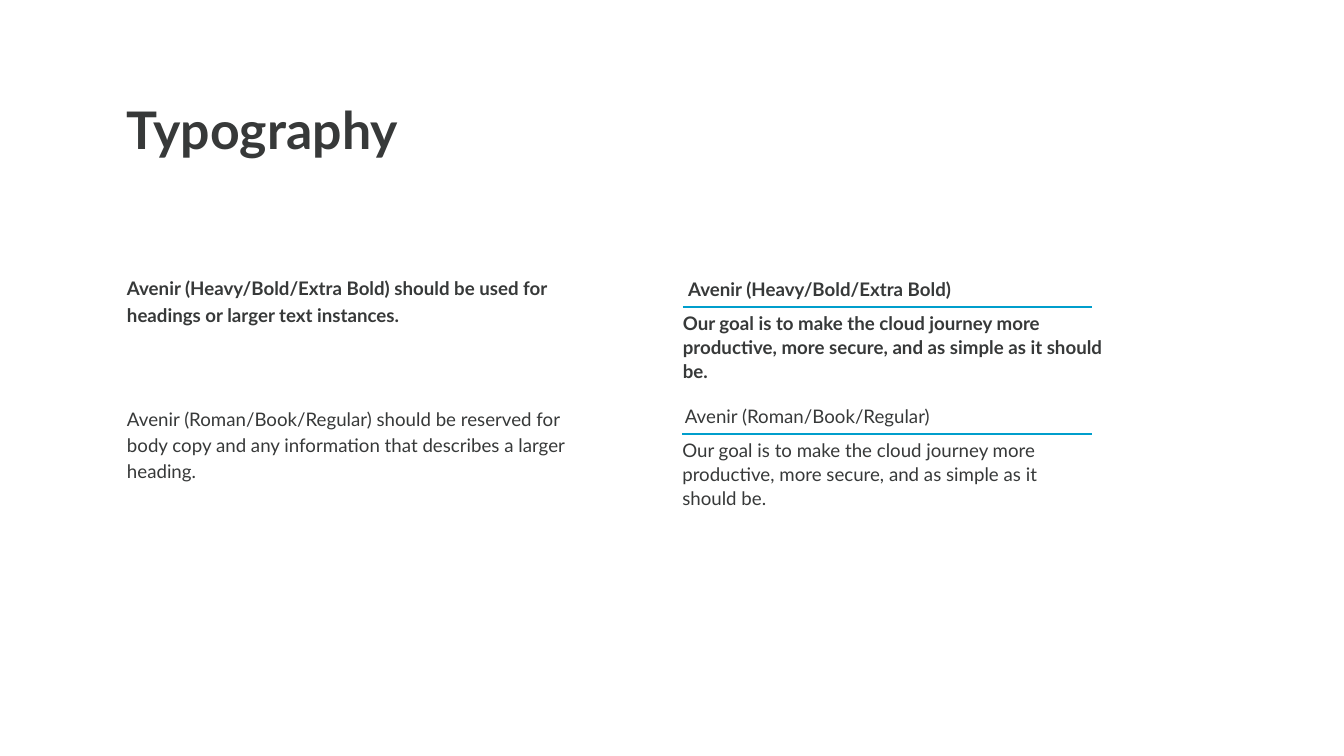
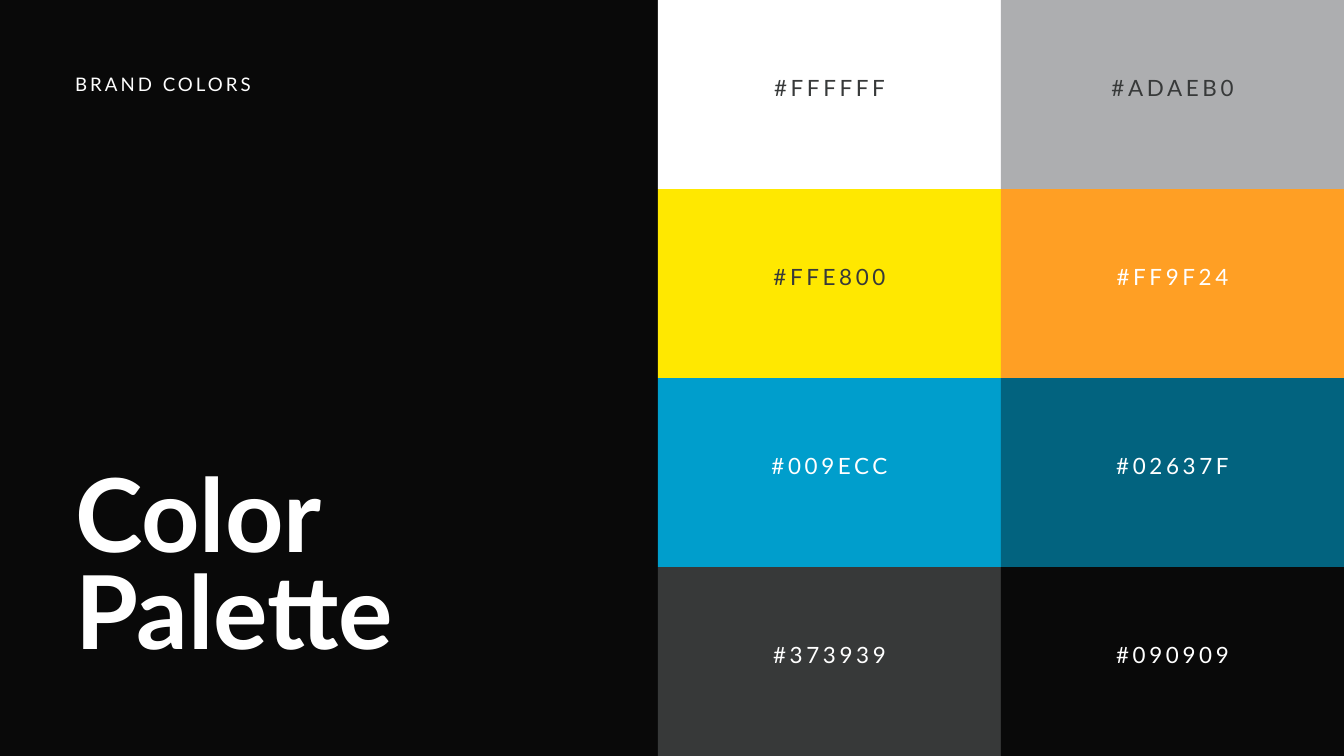
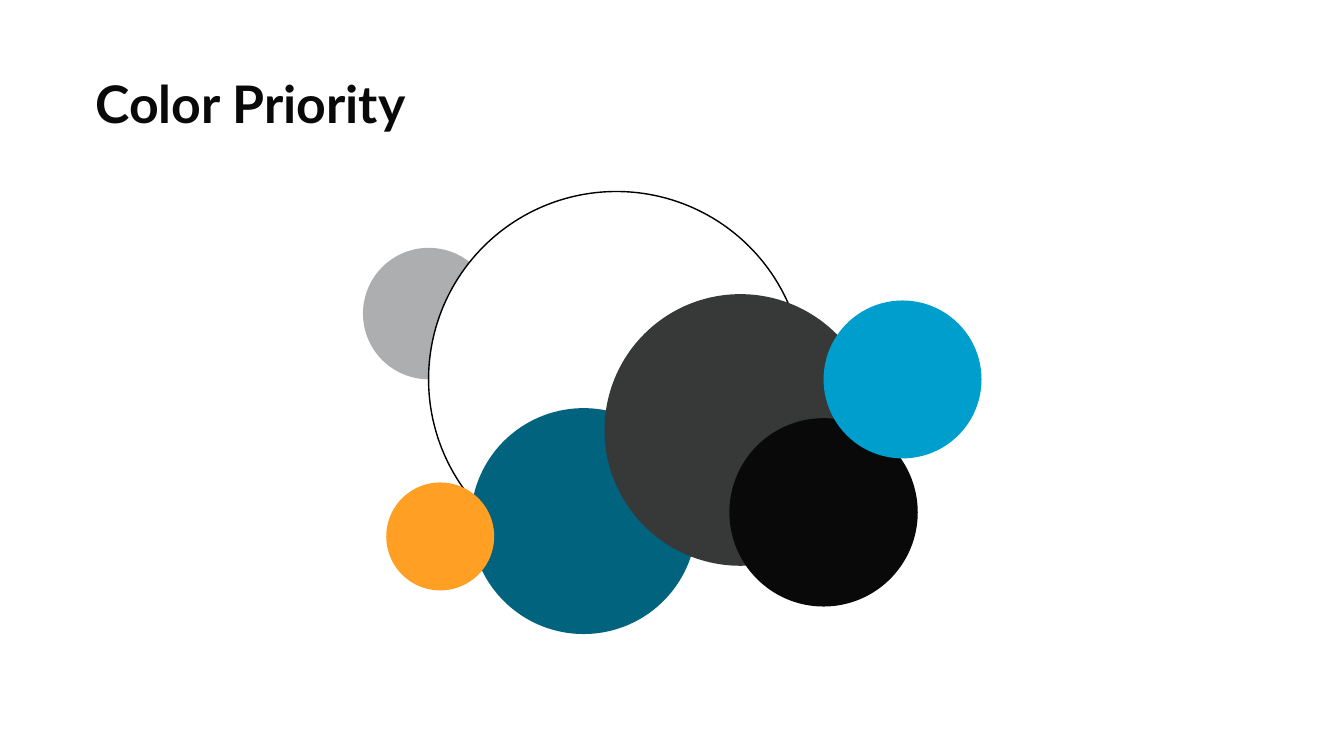
from dataclasses import dataclass

from lxml.etree import SubElement
from pptx import Presentation
from pptx.dml.color import RGBColor
from pptx.enum.shapes import MSO_CONNECTOR as Connector, MSO_SHAPE as Preset
from pptx.enum.text import MSO_ANCHOR as Anchor, MSO_AUTO_SIZE as AutoSize, PP_ALIGN as Align
from pptx.oxml.ns import qn
from pptx.slide import Slide
from pptx.text.text import TextFrame
from pptx.util import Cm, Pt


@dataclass(frozen=True)
class Theme:
    font: str = "Lato"
    white: str = "FFFFFF"
    gray: str = "ADAEB0"
    yellow: str = "FFE800"
    orange: str = "FF9F24"
    blue: str = "009ECC"
    teal: str = "02637F"
    charcoal: str = "373939"
    black: str = "090909"
    outline: str = "000000"
    cover_size: float = 109.2
    title_size: float = 55.5
    swatch_size: float = 24
    body_size: float = 20
    line_width: float = 1.5


THEME = Theme()
SLIDE_WIDTH, SLIDE_HEIGHT = 50.8, 28.58


@dataclass(frozen=True)
class TextStyle:
    size: float
    leading: float
    color: str = THEME.charcoal
    bold: bool = False
    tracking: float = 0
    align: Align = Align.LEFT


@dataclass(frozen=True)
class Box:
    """Position and size in centimetres."""
    left: float
    top: float
    width: float
    height: float


@dataclass(frozen=True)
class FontSample:
    label: str
    bold: bool
    left: float
    rule_top: float
    label_width: float
    text_width: float


@dataclass(frozen=True)
class Swatch:
    fill: str
    text_color: str


@dataclass(frozen=True)
class Circle:
    fill: str
    left: float
    top: float
    diameter: float
    outlined: bool = False


# Slide content
GOAL = ("Our goal is to make the cloud journey more productive, more secure, "
        "and as simple as it should be.")
HEADING_RULE = "Avenir (Heavy/Bold/Extra Bold) should be used for headings or larger text instances."
BODY_RULE = ("Avenir (Roman/Book/Regular) should be reserved for body copy and any "
             "information that describes a larger heading.")

FONT_SAMPLES = [
    FontSample("Avenir (Heavy/Bold/Extra Bold)", True, 25.81, 11.61, 10.34, 15.95),
    FontSample("Avenir (Roman/Book/Regular)", False, 25.79, 16.41, 9.45, 14.71),
]
RULE_RIGHT = 41.28

SWATCH_ROWS = [
    (Swatch(THEME.white, THEME.charcoal), Swatch(THEME.gray, THEME.charcoal)),
    (Swatch(THEME.yellow, THEME.charcoal), Swatch(THEME.orange, THEME.white)),
    (Swatch(THEME.blue, THEME.white), Swatch(THEME.teal, THEME.white)),
    (Swatch(THEME.charcoal, THEME.white), Swatch(THEME.black, THEME.white)),
]
SWATCH_LEFT = 24.87

CIRCLES = [
    Circle(THEME.gray, 13.72, 9.37, 4.97),
    Circle(THEME.white, 16.2, 7.24, 14.2, outlined=True),
    Circle(THEME.teal, 17.79, 15.43, 8.54),
    Circle(THEME.charcoal, 22.85, 11.12, 10.27),
    Circle(THEME.black, 27.57, 15.81, 7.12),
    Circle(THEME.blue, 31.13, 11.36, 5.97),
    Circle(THEME.orange, 14.6, 18.24, 4.08),
]


# Drawing helpers
def add_paragraph(frame: TextFrame, text: str, style: TextStyle,
                  first: bool = True, space_before: float = 0) -> None:
    paragraph = frame.paragraphs[0] if first else frame.add_paragraph()
    paragraph.alignment = style.align
    paragraph.line_spacing = Pt(style.leading)
    paragraph.space_before = Pt(space_before)
    run = paragraph.add_run()
    run.text = text
    run.font.name = THEME.font
    run.font.size = Pt(style.size)
    run.font.bold = style.bold
    run.font.color.rgb = RGBColor.from_string(style.color)
    if style.tracking:
        run._r.get_or_add_rPr().set("spc", str(round(style.tracking * 100)))


def set_margins(frame: TextFrame, side: float, bottom: float) -> None:
    frame.margin_left = frame.margin_top = frame.margin_right = Cm(side)
    frame.margin_bottom = Cm(bottom)


def add_text(slide: Slide, box: Box, text: str, style: TextStyle) -> TextFrame:
    shape = slide.shapes.add_textbox(Cm(box.left), Cm(box.top), Cm(box.width), Cm(box.height))
    frame = shape.text_frame
    frame.word_wrap = True
    frame.auto_size = AutoSize.SHAPE_TO_FIT_TEXT
    set_margins(frame, 0, 0)
    add_paragraph(frame, text, style)
    return frame


def add_filled(slide: Slide, preset: Preset, box: Box, fill: str):
    shape = slide.shapes.add_shape(preset, Cm(box.left), Cm(box.top), Cm(box.width), Cm(box.height))
    shape.shadow.inherit = False
    shape.fill.solid()
    shape.fill.fore_color.rgb = RGBColor.from_string(fill)
    shape.line.fill.background()
    return shape


def add_rule(slide: Slide, left: float, right: float, top: float) -> None:
    rule = slide.shapes.add_connector(Connector.STRAIGHT, Cm(left), Cm(top), Cm(right), Cm(top))
    rule.line.color.rgb = RGBColor.from_string(THEME.blue)
    rule.line.width = Pt(THEME.line_width)
    SubElement(rule._element.spPr, qn("a:effectLst"))


def add_font_sample(slide: Slide, sample: FontSample) -> None:
    label_style = TextStyle(THEME.body_size, 28, bold=sample.bold, align=Align.CENTER)
    text_style = TextStyle(THEME.body_size, 25.8, bold=sample.bold)
    add_text(slide, Box(sample.left, sample.rule_top - 1.26, sample.label_width, 1.07),
             sample.label, label_style)
    add_text(slide, Box(sample.left, sample.rule_top + 0.12, sample.text_width, 2.79),
             GOAL, text_style)
    add_rule(slide, sample.left, RULE_RIGHT, sample.rule_top)


def add_swatch(slide: Slide, box: Box, swatch: Swatch) -> None:
    shape = add_filled(slide, Preset.RECTANGLE, box, swatch.fill)
    frame = shape.text_frame
    frame.vertical_anchor = Anchor.MIDDLE
    set_margins(frame, 0.15, 0.75)
    add_paragraph(frame, f"#{swatch.fill}", TextStyle(
        THEME.swatch_size, 30.9, swatch.text_color, tracking=3.9, align=Align.CENTER))


def add_circle(slide: Slide, circle: Circle) -> None:
    box = Box(circle.left, circle.top, circle.diameter, circle.diameter)
    shape = add_filled(slide, Preset.OVAL, box, circle.fill)
    if circle.outlined:
        shape.line.color.rgb = RGBColor.from_string(THEME.outline)
        shape.line.width = Pt(THEME.line_width)


def new_slide(presentation, background: str) -> Slide:
    slide = presentation.slides.add_slide(presentation.slide_layouts[6])
    slide.background.fill.solid()
    slide.background.fill.fore_color.rgb = RGBColor.from_string(background)
    return slide


# Slides
def build_typography(presentation) -> None:
    slide = new_slide(presentation, THEME.white)
    add_text(slide, Box(4.8, 3.5, 13.46, 2.79), "Typography",
             TextStyle(THEME.title_size, 71.6, bold=True))
    frame = add_text(slide, Box(4.8, 10.34, 17.25, 9.88), HEADING_RULE,
                     TextStyle(THEME.body_size, 28, bold=True))
    add_paragraph(frame, BODY_RULE, TextStyle(THEME.body_size, 28), first=False, space_before=84)
    for sample in FONT_SAMPLES:
        add_font_sample(slide, sample)


def build_palette(presentation) -> None:
    slide = new_slide(presentation, THEME.black)
    cover_style = TextStyle(THEME.cover_size, 103.7, THEME.white, bold=True)
    frame = add_text(slide, Box(2.84, 18.01, 15.98, 8.13), "Color", cover_style)
    add_paragraph(frame, "Palette", cover_style, first=False)
    add_text(slide, Box(2.84, 2.69, 21.34, 0.99), "BRAND COLORS",
             TextStyle(THEME.body_size, 25.8, THEME.white, tracking=3.2))
    width = (SLIDE_WIDTH - SWATCH_LEFT) / 2
    height = SLIDE_HEIGHT / len(SWATCH_ROWS)
    for row, swatches in enumerate(SWATCH_ROWS):
        for column, swatch in enumerate(swatches):
            box = Box(SWATCH_LEFT + column * width, row * height, width, height)
            add_swatch(slide, box, swatch)


def build_priority(presentation) -> None:
    slide = new_slide(presentation, THEME.white)
    add_text(slide, Box(3.61, 3.2, 13.72, 2.29), "Color Priority",
             TextStyle(THEME.title_size, 52.7, THEME.black, bold=True))
    for circle in CIRCLES:
        add_circle(slide, circle)


def main() -> None:
    presentation = Presentation()
    presentation.slide_width = Cm(SLIDE_WIDTH)
    presentation.slide_height = Cm(SLIDE_HEIGHT)
    build_typography(presentation)
    build_palette(presentation)
    build_priority(presentation)
    presentation.save("out.pptx")


if __name__ == "__main__":
    main()
